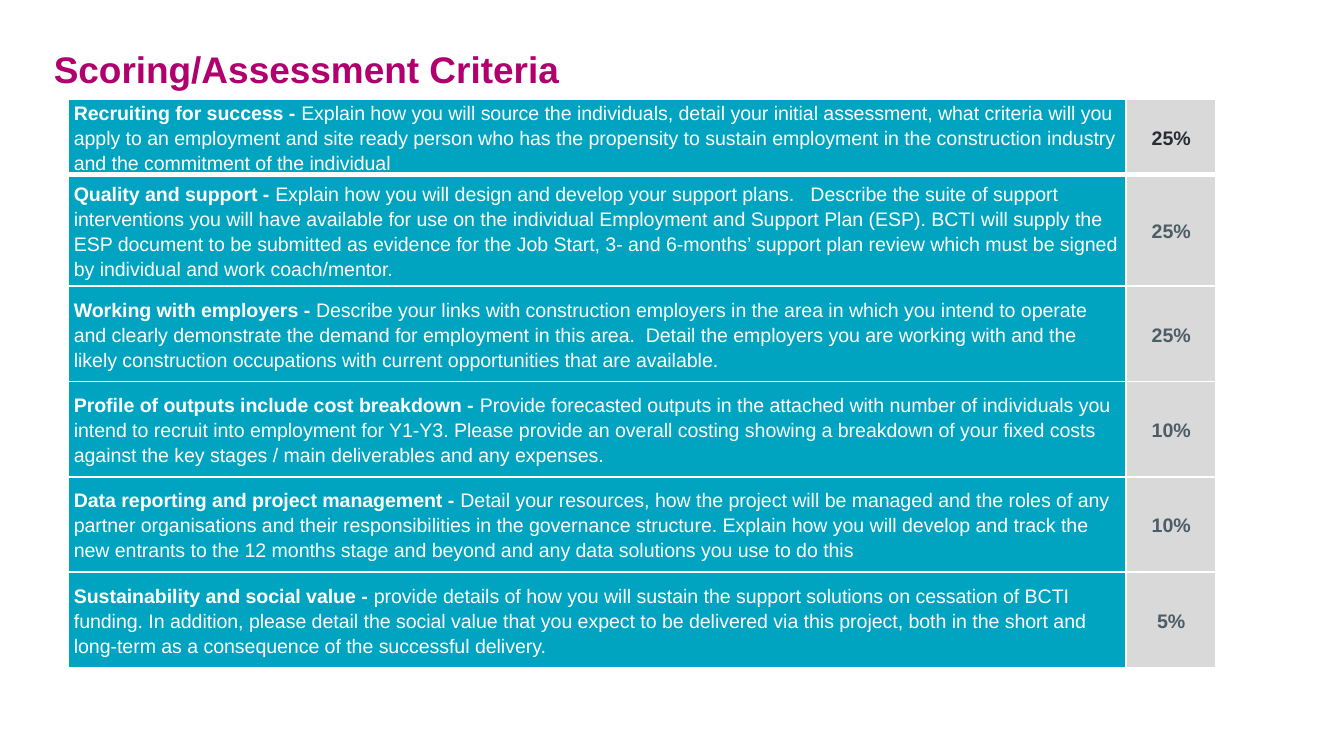
from lxml import etree
from pptx import Presentation
from pptx.dml.color import RGBColor
from pptx.enum.text import MSO_ANCHOR, PP_ALIGN
from pptx.oxml.ns import qn
from pptx.util import Inches, Pt

MIDDLE = MSO_ANCHOR.MIDDLE
LEFT, CENTER = PP_ALIGN.LEFT, PP_ALIGN.CENTER
TITLE_ONLY = 5

FONT = "Arial"
MAGENTA, TEAL, GREY, WHITE = "B1006E", "00A4C0", "D9D9D9", "FFFFFF"
DARK, SLATE = "262E34", "4D5D68"

COLUMN_WIDTHS = [7.87, 0.67]
ROW_HEIGHTS = [0.26, 0.83] + [0.71] * 4  # the first row grows to fit its text

CRITERIA = [
    ("Recruiting for success",
     "Explain how you will source the individuals, detail your initial assessment, what criteria "
     "will you apply to an employment and site ready person who has the propensity to sustain "
     "employment in the construction industry and the commitment of the individual", "25%"),
    ("Quality and support",
     "Explain how you will design and develop your support plans.   Describe the suite of support "
     "interventions you will have available for use on the individual Employment and Support Plan "
     "(ESP). BCTI will supply the ESP document to be submitted as evidence for the Job Start, 3- "
     "and 6-months’ support plan review which must be signed by individual and work "
     "coach/mentor.", "25%"),
    ("Working with employers",
     "Describe your links with construction employers in the area in which you intend to operate "
     "and clearly demonstrate the demand for employment in this area.  Detail the employers you "
     "are working with and the likely construction occupations with current opportunities that "
     "are available.", "25%"),
    ("Profile of outputs include cost breakdown",
     "Provide forecasted outputs in the attached with number of individuals you intend to recruit "
     "into employment for Y1-Y3. Please provide an overall costing showing a breakdown of your "
     "fixed costs against the key stages / main deliverables and any expenses.", "10%"),
    ("Data reporting and project management",
     "Detail your resources, how the project will be managed and the roles of any partner "
     "organisations and their responsibilities in the governance structure. Explain how you will "
     "develop and track the new entrants to the 12 months stage and beyond and any data solutions "
     "you use to do this", "10%"),
    ("Sustainability and social value",
     "provide details of how you will sustain the support solutions on cessation of BCTI funding. "
     "In addition, please detail the social value that you expect to be delivered via this "
     "project, both in the short and long-term as a consequence of the successful delivery.", "5%"),
]


def color(hex_string):
    return RGBColor.from_string(hex_string)


def add_run(paragraph, text, size, hex_color, bold):
    run = paragraph.add_run()
    run.text = text
    run.font.name = FONT
    run.font.size = Pt(size)
    run.font.bold = bold
    run.font.color.rgb = color(hex_color)


def add_title(slide, text):
    title = slide.shapes.title
    title.left, title.top = Inches(0.3), Inches(0.33)
    title.width, title.height = Inches(9.27), Inches(0.41)
    title.text_frame.vertical_anchor = MIDDLE
    title.text_frame.word_wrap = True
    paragraph = title.text_frame.paragraphs[0]
    paragraph.alignment = LEFT
    paragraph.line_spacing = 0.9
    add_run(paragraph, text, 19.8, MAGENTA, True)


def set_borders(cell, widths):
    """Draw white borders; widths in points are keyed by side: L, R, T, B."""
    properties = cell._tc.get_or_add_tcPr()
    for side, width in widths.items():
        line = etree.SubElement(properties, qn(f"a:ln{side}"), w=str(int(Pt(width))))
        fill = etree.SubElement(line, qn("a:solidFill"))
        etree.SubElement(fill, qn("a:srgbClr"), val=WHITE)


def fill_cell(cell, runs, fill, alignment, borders):
    set_borders(cell, borders)
    cell.fill.solid()
    cell.fill.fore_color.rgb = color(fill)
    cell.vertical_anchor = MIDDLE
    cell.margin_left = cell.margin_right = Inches(0.04)
    cell.margin_top = cell.margin_bottom = 0
    paragraph = cell.text_frame.paragraphs[0]
    paragraph.alignment = alignment
    paragraph.line_spacing = 1.15
    paragraph.space_after = Pt(10)
    for text, hex_color, bold in runs:
        add_run(paragraph, text, 10.5, hex_color, bold)


def add_criteria_table(slide):
    table = slide.shapes.add_table(
        len(CRITERIA), len(COLUMN_WIDTHS), Inches(0.51), Inches(0.74),
        Inches(8.55), Inches(4.26)).table
    table.horz_banding = False
    for column, width in zip(table.columns, COLUMN_WIDTHS):
        column.width = Inches(width)
    for row, height in zip(table.rows, ROW_HEIGHTS):
        row.height = Inches(height)
    for index, (heading, description, weight) in enumerate(CRITERIA):
        borders = {"L": 1, "R": 1, "T": 3 if index == 1 else 1, "B": 3 if index == 0 else 1}
        criterion = [(f"{heading} - ", WHITE, True), (description, WHITE, False)]
        score = [(weight, DARK if index == 0 else SLATE, True)]
        fill_cell(table.cell(index, 0), criterion, TEAL, LEFT, borders)
        fill_cell(table.cell(index, 1), score, GREY, CENTER, borders)


def main():
    presentation = Presentation()
    presentation.slide_width = Inches(10)
    presentation.slide_height = presentation.slide_width * 9 // 16
    slide = presentation.slides.add_slide(presentation.slide_layouts[TITLE_ONLY])
    add_title(slide, "Scoring/Assessment Criteria")
    add_criteria_table(slide)
    presentation.save("out.pptx")


if __name__ == "__main__":
    main()
